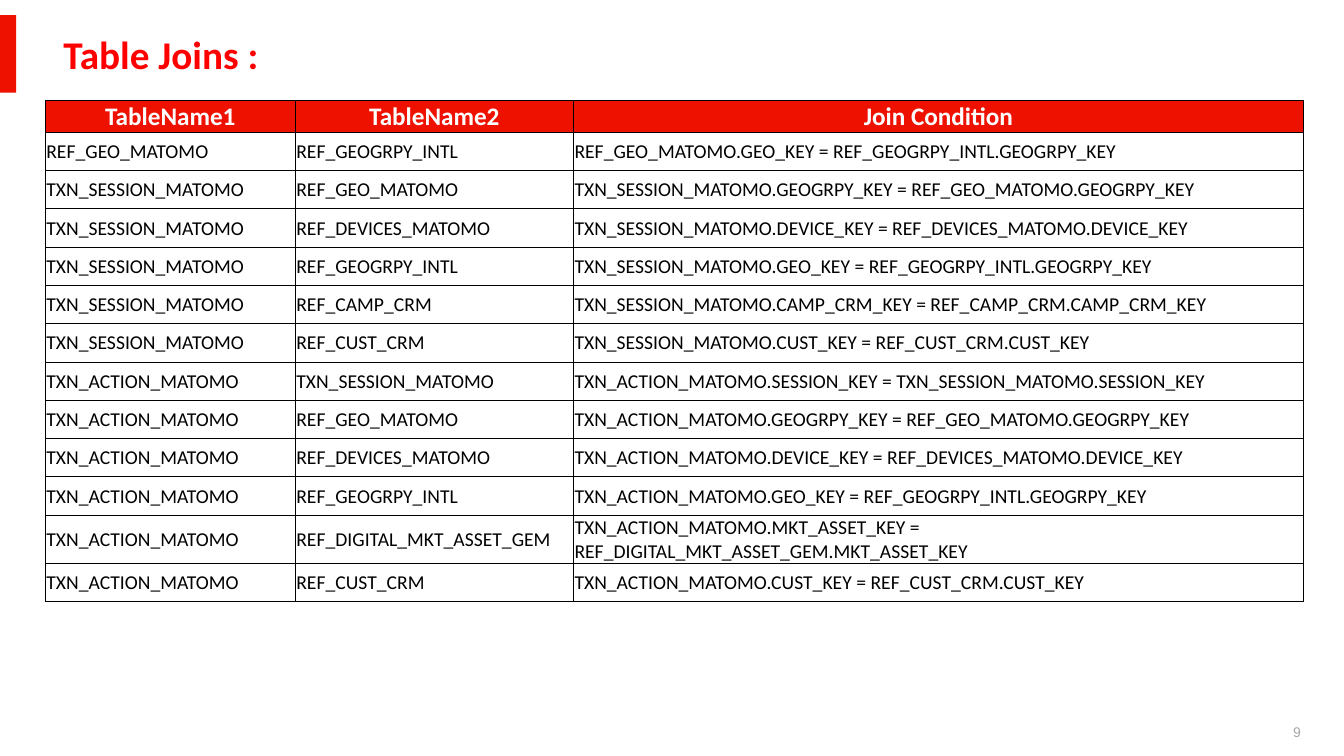
from lxml import etree
from pptx import Presentation
from pptx.dml.color import RGBColor
from pptx.enum.shapes import MSO_SHAPE
from pptx.enum.text import MSO_ANCHOR, PP_ALIGN
from pptx.oxml.ns import qn
from pptx.util import Inches, Pt

RECTANGLE = MSO_SHAPE.RECTANGLE
MIDDLE = MSO_ANCHOR.MIDDLE
LEFT, CENTER = PP_ALIGN.LEFT, PP_ALIGN.CENTER
TITLE_ONLY = 5

COLORS = {
    "accent": "EE1100",
    "title": "FF0000",
    "header": "FFFFFF",
    "body": "000000",
    "border": "000000",
    "number": "A6A6A6",
}

# The page is a grid of squares, ten to the inch
PAGE_COLUMNS, PAGE_ROWS = 133.33, 75
BAND_TOP, BAND_ROWS = 1.5, 7.7
TABLE_LEFT, TABLE_TOP = 4.5, 10
TABLE_COLUMNS = (24.8, 27.6, 72.4)
HEADER_ROWS, BODY_ROWS = 3, 3.8

HEADINGS = ("TableName1", "TableName2", "Join Condition")
GEO, INTL = "REF_GEO_MATOMO", "REF_GEOGRPY_INTL"
DEVICES, CUSTOMER = "REF_DEVICES_MATOMO", "REF_CUST_CRM"
CAMPAIGN, ASSET = "REF_CAMP_CRM", "REF_DIGITAL_MKT_ASSET_GEM"
SESSION, ACTION = "TXN_SESSION_MATOMO", "TXN_ACTION_MATOMO"

# First table, its key, second table, its key
JOINS = (
    (GEO, "GEO_KEY", INTL, "GEOGRPY_KEY"),
    (SESSION, "GEOGRPY_KEY", GEO, "GEOGRPY_KEY"),
    (SESSION, "DEVICE_KEY", DEVICES, "DEVICE_KEY"),
    (SESSION, "GEO_KEY", INTL, "GEOGRPY_KEY"),
    (SESSION, "CAMP_CRM_KEY", CAMPAIGN, "CAMP_CRM_KEY"),
    (SESSION, "CUST_KEY", CUSTOMER, "CUST_KEY"),
    (ACTION, "SESSION_KEY", SESSION, "SESSION_KEY"),
    (ACTION, "GEOGRPY_KEY", GEO, "GEOGRPY_KEY"),
    (ACTION, "DEVICE_KEY", DEVICES, "DEVICE_KEY"),
    (ACTION, "GEO_KEY", INTL, "GEOGRPY_KEY"),
    (ACTION, "MKT_ASSET_KEY", ASSET, "MKT_ASSET_KEY"),
    (ACTION, "CUST_KEY", CUSTOMER, "CUST_KEY"),
)


def grid(squares):
    return Inches(squares / 10)


def place(left, top, width, height):
    return [grid(length) for length in (left, top, width, height)]


def write(frame, text, size, color, font="Calibri", bold=False, align=LEFT):
    frame.text = text
    para = frame.paragraphs[0]
    para.alignment = align
    for span in para.runs:
        span.font.name = font
        span.font.size = Pt(size)
        span.font.bold = bold
        span.font.color.rgb = RGBColor.from_string(COLORS[color])


def add_accent_bar(page):
    bar = page.shapes.add_shape(RECTANGLE, *place(0, BAND_TOP, 1.6, BAND_ROWS))
    bar.shadow.inherit = False
    bar.fill.solid()
    bar.fill.fore_color.rgb = RGBColor.from_string(COLORS["accent"])
    bar.line.fill.background()


def set_title(page, text):
    title = page.shapes.title
    title.left, title.top, title.width, title.height = place(
        5.3, BAND_TOP, 121.8, BAND_ROWS)
    title.text_frame.vertical_anchor = MIDDLE
    write(title.text_frame, text, 28, "title", bold=True)


def add_page_number(page, text):
    box = page.shapes.add_textbox(*place(127.3, 71.5, 3.3, 2.3))
    box.text_frame.word_wrap = True
    box.text_frame.vertical_anchor = MIDDLE
    write(box.text_frame, text, 10, "number", font="Arial")


def add_borders(cell):
    properties = cell._tc.get_or_add_tcPr()
    for position, side in enumerate(("a:lnL", "a:lnR", "a:lnT", "a:lnB")):
        line = etree.Element(qn(side), w=str(Pt(0.5)))
        fill = etree.SubElement(line, qn("a:solidFill"))
        etree.SubElement(fill, qn("a:srgbClr"), val=COLORS["border"])
        properties.insert(position, line)


def fill_cell(cell, text, is_header):
    cell.vertical_anchor = MIDDLE
    cell.margin_left = cell.margin_right = cell.margin_top = grid(0.1)
    cell.margin_bottom = 0
    if is_header:
        cell.fill.solid()
        cell.fill.fore_color.rgb = RGBColor.from_string(COLORS["accent"])
        write(cell.text_frame, text, 18, "header", bold=True, align=CENTER)
    else:
        cell.fill.background()
        write(cell.text_frame, text, 14, "body")
    add_borders(cell)


def add_join_table(page):
    rows = [HEADINGS]
    for first, first_key, second, second_key in JOINS:
        rows.append((first, second, f"{first}.{first_key} = {second}.{second_key}"))
    height = HEADER_ROWS + BODY_ROWS * len(JOINS)
    frame = page.shapes.add_table(
        len(rows), len(HEADINGS),
        *place(TABLE_LEFT, TABLE_TOP, sum(TABLE_COLUMNS), height))
    table = frame.table
    table.horz_banding = False
    for column, width in zip(table.columns, TABLE_COLUMNS):
        column.width = grid(width)
    for index, texts in enumerate(rows):
        is_header = index == 0
        table.rows[index].height = grid(HEADER_ROWS if is_header else BODY_ROWS)
        for cell, text in zip(table.rows[index].cells, texts):
            fill_cell(cell, text, is_header)


def main():
    deck = Presentation()
    deck.slide_width, deck.slide_height = grid(PAGE_COLUMNS), grid(PAGE_ROWS)
    page = deck.slides.add_slide(deck.slide_layouts[TITLE_ONLY])
    add_accent_bar(page)
    add_page_number(page, "9")
    set_title(page, "Table Joins :")
    add_join_table(page)
    deck.save("out.pptx")


if __name__ == "__main__":
    main()
